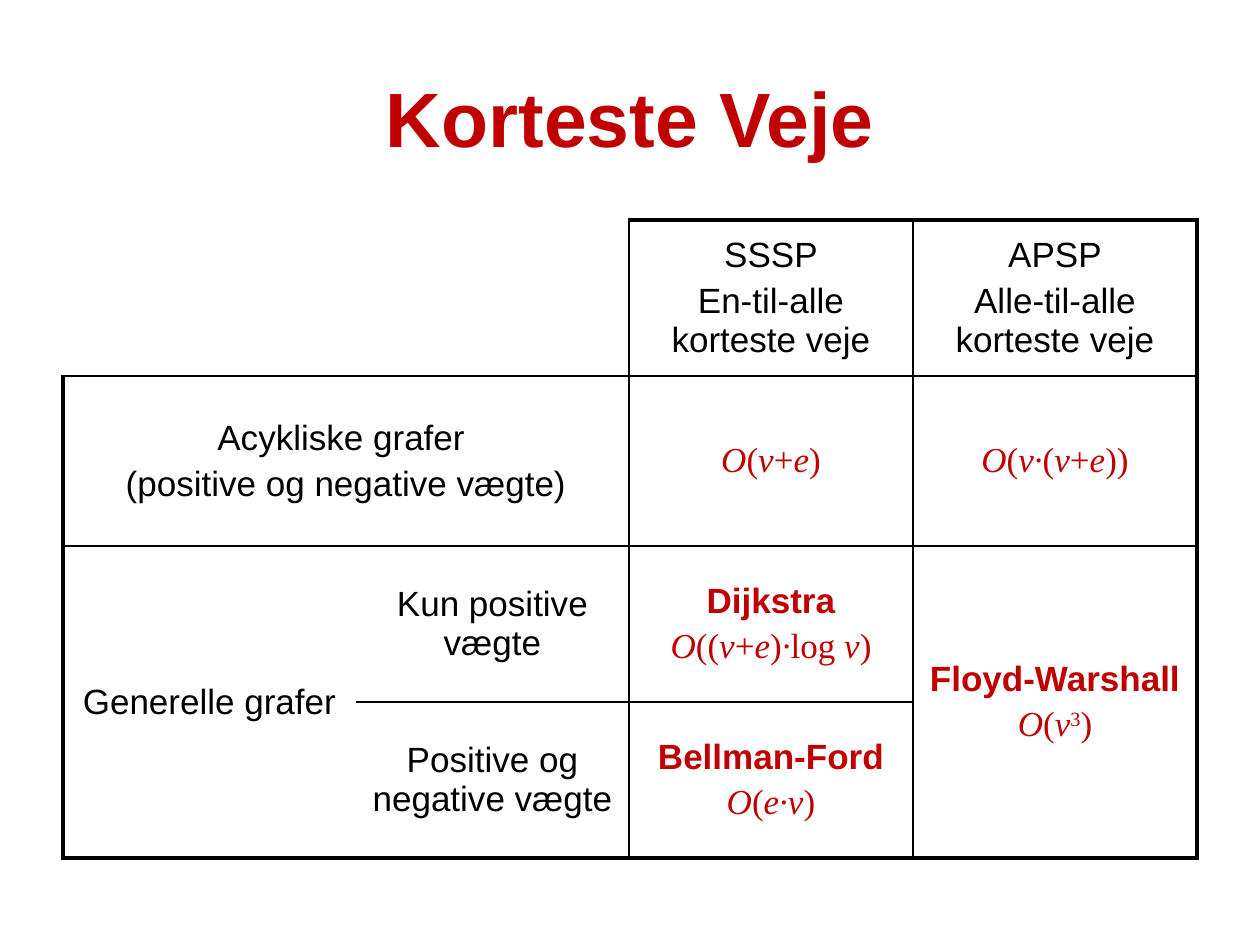
import itertools

import lxml.etree
import pptx
import pptx.dml.color
import pptx.enum.text
import pptx.oxml.ns
import pptx.util

BLACK, RED = "000000", "C00000"
SANS, SERIF = "Arial", "Times New Roman"
NO_STYLE = "{2D5ABB26-0587-4C30-8999-92F81FD0307C}"

TITLE = "Korteste Veje"
LABEL, ALGORITHM, FORMULA = "label", "algorithm", "formula"
STYLES = {
    LABEL: dict(font=SANS, color=BLACK),
    ALGORITHM: dict(font=SANS, color=RED, bold=True),
    FORMULA: dict(font=SERIF, color=RED),
}

# (row, column, row span, column span, sides without a border, lines)
REGIONS = [
    (0, 0, 1, 2, "LT", []),
    (0, 2, 1, 1, "", [(LABEL, "SSSP"), (LABEL, "En-til-alle korteste veje")]),
    (0, 3, 1, 1, "", [(LABEL, "APSP"), (LABEL, "Alle-til-alle korteste veje")]),
    (1, 0, 1, 2, "", [(LABEL, "Acykliske grafer "),
                      (LABEL, "(positive og negative vægte)")]),
    (1, 2, 1, 1, "", [(FORMULA, "O(v+e)")]),
    (1, 3, 1, 1, "", [(FORMULA, "O(v·(v+e))")]),
    (2, 0, 2, 1, "R", [(LABEL, "Generelle grafer")]),
    (2, 1, 1, 1, "L", [(LABEL, "Kun positive vægte")]),
    (2, 2, 1, 1, "", [(ALGORITHM, "Dijkstra"), (FORMULA, "O((v+e)·log v)")]),
    (2, 3, 2, 1, "", [(ALGORITHM, "Floyd-Warshall"), (FORMULA, "O(v3)")]),
    (3, 1, 1, 1, "L", [(LABEL, "Positive og negative vægte")]),
    (3, 2, 1, 1, "", [(ALGORITHM, "Bellman-Ford"), (FORMULA, "O(e·v)")]),
]

COLUMN_WIDTHS = [293, 273, 284, 284]
ROW_HEIGHTS = [156, 170, 156, 156]
LEFT, TABLE_TOP = 63, 220
TITLE_TOP, TITLE_HEIGHT = 38, 158
OUTER_LINE, INNER_LINE = 2.25, 1


def px(length):
    return round(length * 914400 / 126)


def rgb(value):
    return pptx.dml.color.RGBColor.from_string(value)


def formula_parts(formula):
    """Split into (text, italic, superscript): symbols slant, digits are exponents."""
    def kind(char):
        return char in "Oev·", char.isdigit()
    return [("".join(chars), *key) for key, chars in itertools.groupby(formula, kind)]


def write(paragraph, text, font=SANS, size=20, color=BLACK, bold=False,
          italic=False, superscript=False):
    run = paragraph.add_run()
    run.text = text
    run.font.name, run.font.size = font, pptx.util.Pt(size)
    run.font.bold, run.font.italic = bold, italic
    run.font.color.rgb = rgb(color)
    if superscript:
        run.font._element.set("baseline", "30000")


def set_borders(cell, widths):
    properties = cell._tc.get_or_add_tcPr()
    for side in "LRTB":
        if side not in widths:
            continue
        line = lxml.etree.SubElement(properties, pptx.oxml.ns.qn(f"a:ln{side}"),
                                     w=str(pptx.util.Pt(widths[side])))
        fill = lxml.etree.SubElement(line, pptx.oxml.ns.qn("a:solidFill"))
        lxml.etree.SubElement(fill, pptx.oxml.ns.qn("a:srgbClr"), val=BLACK)


def fill_region(table, row, column, row_span, column_span, open_sides, lines):
    last_row, last_column = row + row_span - 1, column + column_span - 1
    origin = table.cell(row, column)
    if row_span * column_span > 1:
        origin.merge(table.cell(last_row, last_column))

    at_edge = {"L": column == 0, "R": last_column == len(COLUMN_WIDTHS) - 1,
               "T": row == 0, "B": last_row == len(ROW_HEIGHTS) - 1}
    widths = {side: OUTER_LINE if outer else INNER_LINE
              for side, outer in at_edge.items() if side not in open_sides}
    for r, c in itertools.product(range(row, last_row + 1),
                                  range(column, last_column + 1)):
        cell = table.cell(r, c)
        touches = {"L": c == column, "R": c == last_column,
                   "T": r == row, "B": r == last_row}
        set_borders(cell, {side: width for side, width in widths.items()
                           if touches[side] or cell.is_merge_origin})
        cell.fill.background()

    origin.vertical_anchor = pptx.enum.text.MSO_ANCHOR.MIDDLE
    for index, (style, text) in enumerate(lines):
        frame = origin.text_frame
        paragraph = frame.add_paragraph() if index else frame.paragraphs[0]
        paragraph.alignment = pptx.enum.text.PP_ALIGN.CENTER
        paragraph.space_before = pptx.util.Pt(4)
        parts = formula_parts(text) if style == FORMULA else [(text, False, False)]
        for part, italic, superscript in parts:
            write(paragraph, part, italic=italic, superscript=superscript,
                  **STYLES[style])


def main():
    deck = pptx.Presentation()
    deck.slide_width, deck.slide_height = px(1260), px(945)
    slide = deck.slides.add_slide(deck.slide_layouts[5])
    width = sum(COLUMN_WIDTHS)

    title = slide.shapes.title
    title.left, title.top = px(LEFT), px(TITLE_TOP)
    title.width, title.height = px(width), px(TITLE_HEIGHT)
    title.text_frame.vertical_anchor = pptx.enum.text.MSO_ANCHOR.MIDDLE
    heading = title.text_frame.paragraphs[0]
    heading.alignment = pptx.enum.text.PP_ALIGN.CENTER
    write(heading, TITLE, size=44, color=RED, bold=True)

    frame = slide.shapes.add_table(len(ROW_HEIGHTS), len(COLUMN_WIDTHS), px(LEFT),
                                   px(TABLE_TOP), px(width), px(sum(ROW_HEIGHTS)))
    table = frame.table
    table.first_row = table.horz_banding = False
    table._tbl.tblPr.find(pptx.oxml.ns.qn("a:tableStyleId")).text = NO_STYLE
    for column, column_width in zip(table.columns, COLUMN_WIDTHS):
        column.width = px(column_width)
    for row, row_height in zip(table.rows, ROW_HEIGHTS):
        row.height = px(row_height)
    for region in REGIONS:
        fill_region(table, *region)

    deck.save("out.pptx")


if __name__ == "__main__":
    main()
